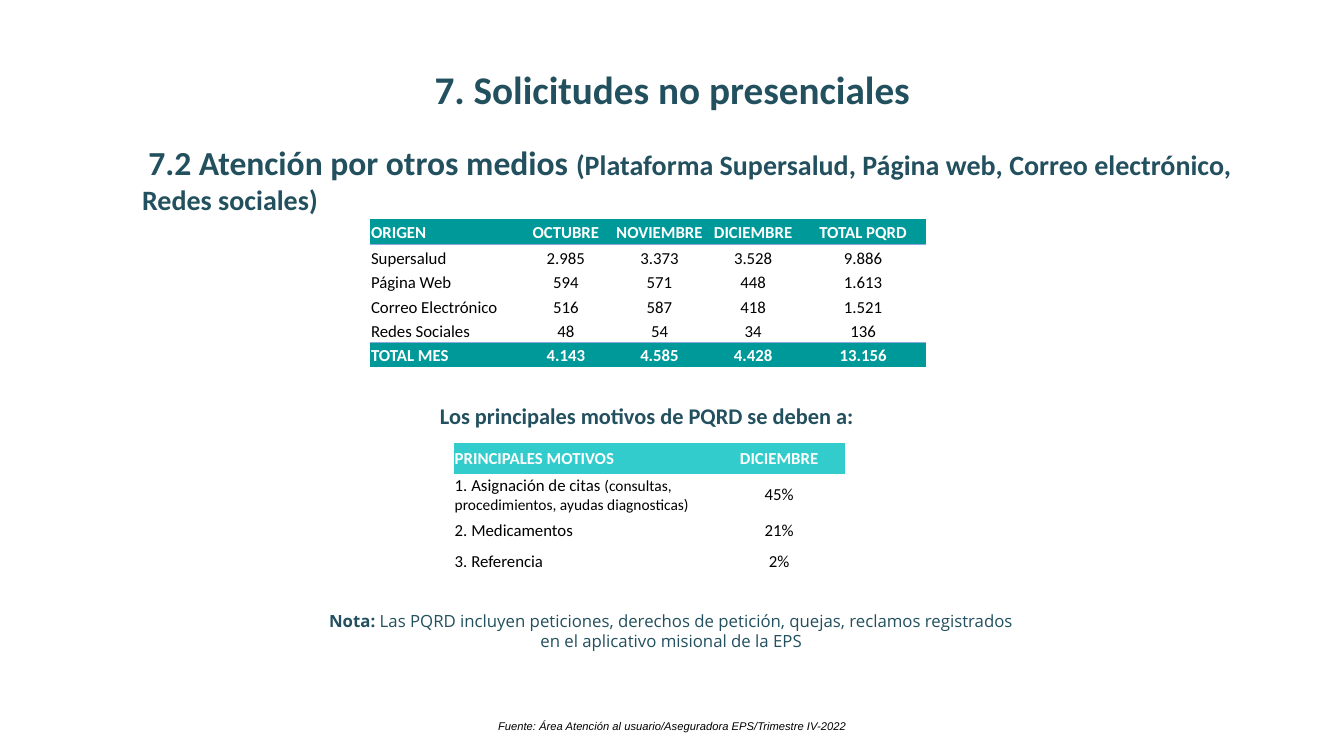
import pptx
import pptx.dml.color
import pptx.enum.text
import pptx.oxml
import pptx.oxml.ns
import pptx.util

Cm, Pt = pptx.util.Cm, pptx.util.Pt
ALIGN, ANCHOR = pptx.enum.text.PP_ALIGN, pptx.enum.text.MSO_ANCHOR
NO_STYLE = "{2D5ABB26-0587-4C30-8999-92F81FD0307C}"


def rgb(value):
    return pptx.dml.color.RGBColor.from_string(value)


class Deck:
    INK, BLACK, WHITE = "23505E", "000000", "FFFFFF"
    TEAL, TURQUOISE, RULE = "009999", "33CCCC", "8EA9DB"

    def __init__(self):
        self.prs = pptx.Presentation()
        self.prs.slide_width, self.prs.slide_height = Cm(33.87), Cm(19.05)
        self.s = self.prs.slides.add_slide(self.prs.slide_layouts[6])

    def font(self, font, size, color, bold=False, italic=False, name="Calibri"):
        font.name, font.size = name, Pt(size)
        font.bold, font.italic = bold, italic
        font.color.rgb = rgb(color)

    def text(self, box, runs, size, color=INK, align=ALIGN.CENTER, **style):
        sp = self.s.shapes.add_textbox(*(Cm(v) for v in box))
        tf = sp.text_frame
        tf.word_wrap = True
        p = tf.paragraphs[0]
        p.alignment = align
        self.font(p.font, size, color, **style)
        self.runs(p, runs)

    def runs(self, p, runs):
        for text, changes in runs:
            r = p.add_run()
            r.text = text
            for name, value in changes.items():
                setattr(r.font, name, value)

    def border(self, cell, side, visible):
        line = (f'<a:solidFill><a:srgbClr val="{self.RULE}"/></a:solidFill>'
                if visible else "<a:noFill/>")
        cell._tc.get_or_add_tcPr().append(pptx.oxml.parse_xml(
            f'<a:{side} {pptx.oxml.ns.nsdecls("a")} w="6350">{line}</a:{side}>'))

    def table(self, left, top, widths, heights, rows, fill, banners,
              body_anchor=ANCHOR.MIDDLE, ruled_edges=()):
        frame = self.s.shapes.add_table(
            len(rows), len(widths), Cm(left), Cm(top),
            Cm(sum(widths)), Cm(sum(heights)))
        tbl = frame.table
        tbl.first_row = tbl.horz_banding = False
        tbl._tbl.tblPr.find(pptx.oxml.ns.qn("a:tableStyleId")).text = NO_STYLE
        for col, width in zip(tbl.columns, widths):
            col.width = Cm(width)
        for i, (row, height, values) in enumerate(zip(tbl.rows, heights, rows)):
            row.height = Cm(height)
            banner = i in banners
            for j, (cell, value) in enumerate(zip(row.cells, values)):
                cell.margin_left = cell.margin_right = cell.margin_top = Cm(0.03)
                cell.margin_bottom = 0
                cell.vertical_anchor = ANCHOR.MIDDLE if banner else body_anchor
                self.border(cell, "lnT", i in ruled_edges)
                self.border(cell, "lnB", i + 1 in ruled_edges)
                if banner:
                    cell.fill.solid()
                    cell.fill.fore_color.rgb = rgb(fill)
                else:
                    cell.fill.background()
                p = cell.text_frame.paragraphs[0]
                p.alignment = ALIGN.CENTER if j else ALIGN.LEFT
                self.font(p.font, 12, self.WHITE if banner else self.BLACK, bold=banner)
                self.runs(p, [(value, {})] if isinstance(value, str) else value)


def main():
    d = Deck()
    d.table(9.32, 5.53, [3.76, 2.36, 2.36, 2.36, 3.18], [0.62] * 6, [
        ["ORIGEN", "OCTUBRE", "NOVIEMBRE", "DICIEMBRE", "TOTAL PQRD"],
        ["Supersalud", "2.985", "3.373", "3.528", "9.886"],
        ["Página Web", "594", "571", "448", "1.613"],
        ["Correo Electrónico", "516", "587", "418", "1.521"],
        ["Redes Sociales", "48", "54", "34", "136"],
        ["TOTAL MES", "4.143", "4.585", "4.428", "13.156"],
    ], d.TEAL, (0, 5), ANCHOR.BOTTOM, ruled_edges=(1, 5))
    d.table(11.43, 11.16, [6.55, 3.31], [0.78, 1, 0.78, 0.78], [
        ["PRINCIPALES MOTIVOS", "DICIEMBRE"],
        [[("1. Asignación de citas ", {}),
          ("(consultas, procedimientos, ayudas diagnosticas)", {"size": Pt(11)})], "45%"],
        ["2. Medicamentos", "21%"],
        ["3. Referencia", "2%"],
    ], d.TURQUOISE, (0,))
    d.text((10.47, 10.01, 11.79, 0.94),
           [("Los principales motivos de PQRD se deben a: ", {})], 16, bold=True)
    d.text((7.88, 15.27, 18.08, 1.27), [
        ("Nota: ", {"bold": True}),
        ("Las PQRD incluyen peticiones, derechos de petición, quejas, reclamos "
         "registrados en el aplicativo misional de la EPS", {}),
    ], 12, "22505E", name="Open Sans")
    d.text((8.69, 18.01, 16.51, 0.61),
           [("Fuente: Área Atención al usuario/Aseguradora EPS/Trimestre IV-2022", {})],
           8, d.BLACK, italic=True, name="Arial")
    d.text((5.23, 1.52, 23.42, 1.45), [("7. Solicitudes no presenciales", {})], 28, bold=True)
    d.text((3.33, 3.45, 29, 3.18), [
        (" ", {}),
        ("7.2 Atención por otros medios ", {"size": Pt(24)}),
        ("(Plataforma Supersalud, Página web, Correo electrónico, Redes sociales)", {}),
    ], 20, align=ALIGN.LEFT, bold=True)
    d.prs.save("out.pptx")


if __name__ == "__main__":
    main()
